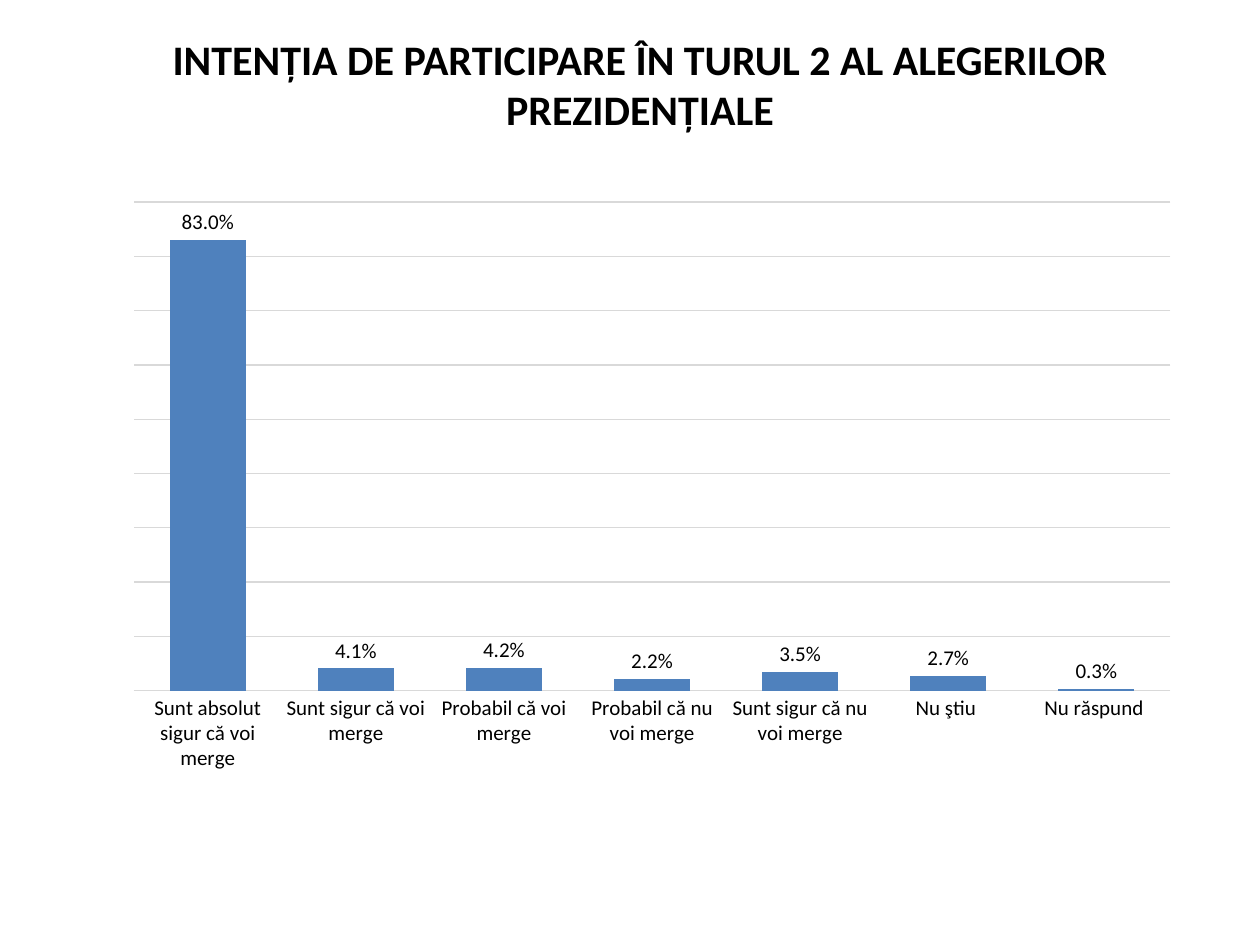
import pptx
import pptx.util
import pptx.chart.data
import pptx.dml.color
import pptx.enum.chart
import pptx.enum.text

Inches = pptx.util.Inches
Pt = pptx.util.Pt
RGBColor = pptx.dml.color.RGBColor
enum = pptx.enum.chart

BLACK = RGBColor(0x00, 0x00, 0x00)
GREY = RGBColor(0xD9, 0xD9, 0xD9)
BLUE = RGBColor(0x4F, 0x81, 0xBD)


def style(font, size, bold=False):
    font.name = "Calibri"
    font.size = Pt(size)
    font.bold = bold
    font.color.rgb = BLACK


def write(frame, text, size=12, bold=False, align=pptx.enum.text.PP_ALIGN.CENTER):
    frame.word_wrap = True
    frame.auto_size = pptx.enum.text.MSO_AUTO_SIZE.NONE
    frame.vertical_anchor = pptx.enum.text.MSO_ANCHOR.MIDDLE
    para = frame.paragraphs[0]
    para.alignment = align
    run = para.add_run()
    run.text = text
    style(run.font, size, bold)


deck = pptx.Presentation()
deck.slide_width = Inches(10)
deck.slide_height = Inches(7.5)
slide = deck.slides.add_slide(deck.slide_layouts[5])

# Title
title = slide.shapes.title
title.left, title.top = Inches(0.58), Inches(0.25)
title.width, title.height = Inches(9), Inches(0.83)
write(title.text_frame,
      "INTENȚIA DE PARTICIPARE ÎN TURUL 2 AL ALEGERILOR PREZIDENȚIALE",
      size=24, bold=True)

# Answers and their shares
shares = {
    "Sunt absolut sigur că voi merge": 0.83,
    "Sunt sigur că voi merge": 0.041,
    "Probabil că voi merge": 0.042,
    "Probabil că nu voi merge": 0.022,
    "Sunt sigur că nu voi merge": 0.035,
    "Nu ştiu ": 0.027,
    "Nu răspund ": 0.003,
}
data = pptx.chart.data.CategoryChartData(number_format="0.0%")
data.categories = list(shares)
data.add_series("Series 1", list(shares.values()))

chart = slide.shapes.add_chart(
    enum.XL_CHART_TYPE.COLUMN_CLUSTERED,
    Inches(0.89), Inches(1.51), Inches(8.57), Inches(4.7), data).chart
chart.has_legend = False
chart.has_title = False
style(chart.font, 12)

# Columns
plot = chart.plots[0]
plot.vary_by_categories = False
plot.gap_width = 95
plot.overlap = -27
fill = plot.series[0].format.fill
fill.solid()
fill.fore_color.rgb = BLUE

plot.has_data_labels = True
labels = plot.data_labels
labels.show_value = True
labels.number_format = "0.0%"
labels.number_format_is_linked = False
labels.position = enum.XL_LABEL_POSITION.OUTSIDE_END
style(labels.font, 12)

# Axes
answers = chart.category_axis
answers.major_tick_mark = enum.XL_TICK_MARK.NONE
answers.minor_tick_mark = enum.XL_TICK_MARK.NONE
style(answers.tick_labels.font, 12)

scale = chart.value_axis
scale.visible = False
scale.minimum_scale = 0
scale.maximum_scale = 0.9
scale.major_unit = 0.1
scale.has_major_gridlines = True
scale.tick_labels.number_format = "0.0%"
scale.tick_labels.number_format_is_linked = False

for line in (answers.format.line, scale.major_gridlines.format.line):
    line.color.rgb = GREY
    line.width = Pt(0.75)

deck.save("out.pptx")
